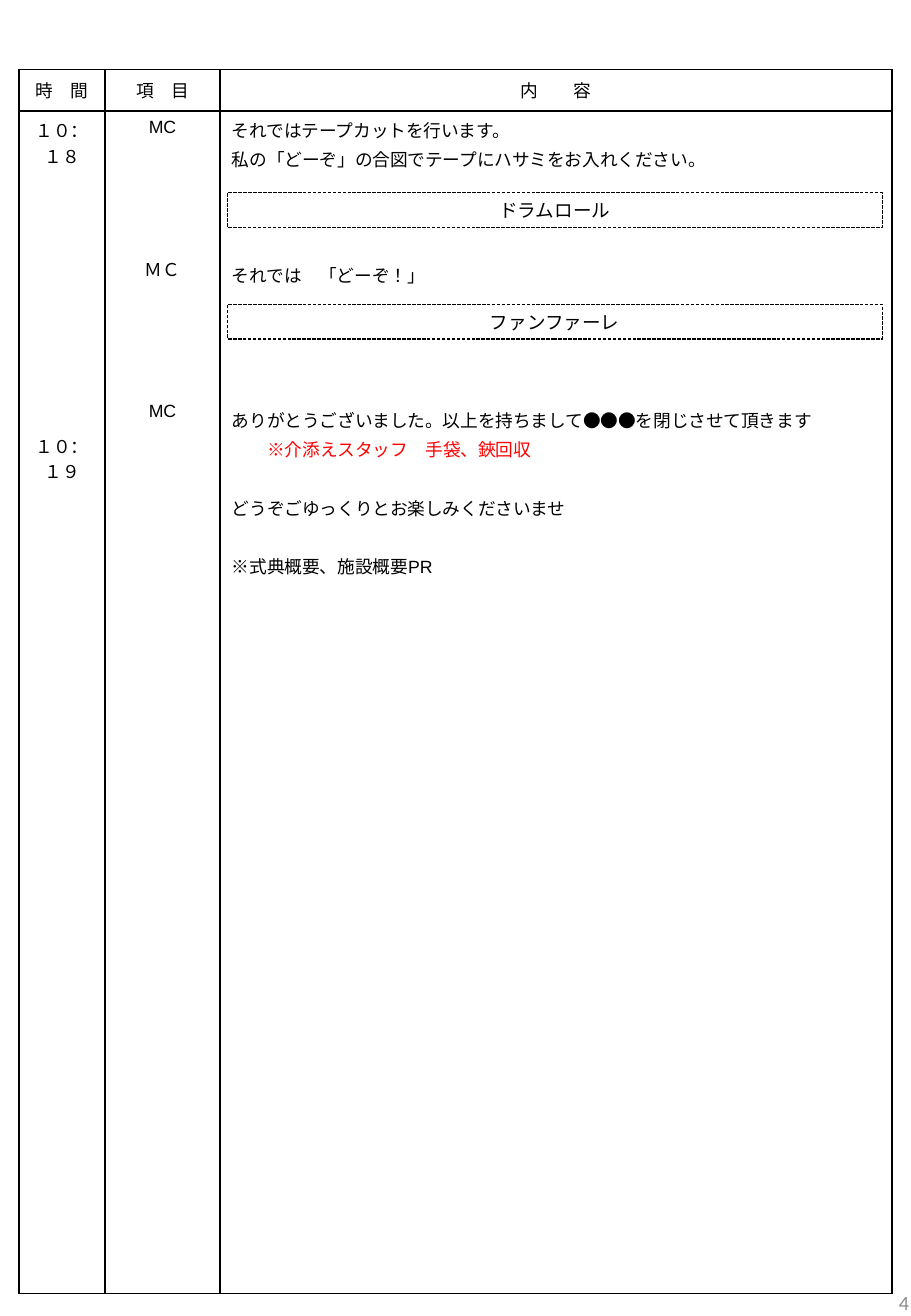
"""Builds the ceremony running-order page: a schedule table with two sound cues."""
from lxml import etree
from pptx import Presentation
from pptx import util as u
from pptx.dml.color import RGBColor
from pptx.enum import dml, lang, shapes, text
from pptx.oxml.ns import qn

BLACK, RED, GREY = "000000", "FF0000", "8C8C8C"
LINE_PITCH, LINE_GAP = 17.2, 2.1
LEFT, CENTER, RIGHT = text.PP_ALIGN.LEFT, text.PP_ALIGN.CENTER, text.PP_ALIGN.RIGHT


def add_text(para, words, align, size=10.5, color=BLACK, face="Arial"):
    para.alignment = align
    span = para.add_run()
    span.text = words
    span.font.size = u.Pt(size)
    span.font.name = face
    span.font.language_id = lang.MSO_LANGUAGE_ID.JAPANESE
    span.font.color.rgb = RGBColor.from_string(color)


def add_borders(cell):
    props = cell._tc.get_or_add_tcPr()
    for position, side in enumerate(("lnL", "lnR", "lnT", "lnB")):
        border = etree.Element(qn(f"a:{side}"), w=str(u.Pt(1)))
        fill = etree.SubElement(border, qn("a:solidFill"))
        etree.SubElement(fill, qn("a:srgbClr"), val=BLACK)
        props.insert(position, border)


deck = Presentation()
deck.slide_width, deck.slide_height = u.Pt(540), u.Pt(780)
page = deck.slides.add_slide(deck.slide_layouts[6])

number_box = page.shapes.add_textbox(u.Pt(420), u.Pt(751), u.Pt(126), u.Pt(41.5))
number_box.text_frame.word_wrap = True
number_box.text_frame.vertical_anchor = text.MSO_ANCHOR.MIDDLE
add_text(number_box.text_frame.paragraphs[0], "4", RIGHT, 12, GREY, "Calibri")

widths, heights = (51, 68, 398.4), (24.6, 701)
schedule = page.shapes.add_table(
    2, 3, u.Pt(11.3), u.Pt(41.2), u.Pt(sum(widths)), u.Pt(sum(heights))
).table
schedule.first_row = schedule.horz_banding = False
for column, width in zip(schedule.columns, widths):
    column.width = u.Pt(width)
for row, height in zip(schedule.rows, heights):
    row.height = u.Pt(height)
for cell in schedule.iter_cells():
    cell.fill.background()
    add_borders(cell)

for column, heading in enumerate(("時　間", "項　目", "内　　容")):
    cell = schedule.cell(0, column)
    cell.vertical_anchor = text.MSO_ANCHOR.MIDDLE
    add_text(cell.text_frame.paragraphs[0], heading, CENTER)

# Each entry: free lines above, wording, indent, colour
entries = (
    (CENTER, ((0, "１０：１８", 0, BLACK), (9, "１０：１９", 0, BLACK))),
    (CENTER, ((0, "MC", 0, BLACK), (4, "ＭＣ", 0, BLACK), (4, "MC", 0, BLACK))),
    (LEFT, (
        (0, "それではテープカットを行います。", 0, BLACK),
        (0, "私の「どーぞ」の合図でテープにハサミをお入れください。", 0, BLACK),
        (3, "それでは　「どーぞ！」", 0, BLACK),
        (4, "ありがとうございました。以上を持ちまして●●●を閉じさせて頂きます", 0, BLACK),
        (0, "※介添えスタッフ　手袋、鋏回収", 21, RED),
        (1, "どうぞごゆっくりとお楽しみくださいませ", 0, BLACK),
        (1, "※式典概要、施設概要PR", 0, BLACK),
    )),
)
for column, (align, lines) in enumerate(entries):
    frame = schedule.cell(1, column).text_frame
    for index, (free_lines, words, indent, color) in enumerate(lines):
        para = frame.add_paragraph() if index else frame.paragraphs[0]
        if index:
            para.space_before = u.Pt(round(LINE_GAP + free_lines * LINE_PITCH, 1))
        if indent:
            para._p.get_or_add_pPr().set("marL", str(u.Pt(indent)))
        add_text(para, words, align, color=color)

for top, cue in ((114.2, "ドラムロール"), (180.3, "ファンファーレ")):
    box = page.shapes.add_shape(
        shapes.MSO_SHAPE.RECTANGLE, u.Pt(134.8), u.Pt(top), u.Pt(388.2), u.Pt(20.7)
    )
    box.shadow.inherit = False
    box.fill.background()
    box.line.color.rgb = RGBColor.from_string(BLACK)
    box.line.width = u.Pt(0.75)
    box.line.dash_style = dml.MSO_LINE.SQUARE_DOT
    box.text_frame.vertical_anchor = text.MSO_ANCHOR.MIDDLE
    add_text(box.text_frame.paragraphs[0], cue, CENTER, 11)

deck.save("out.pptx")
